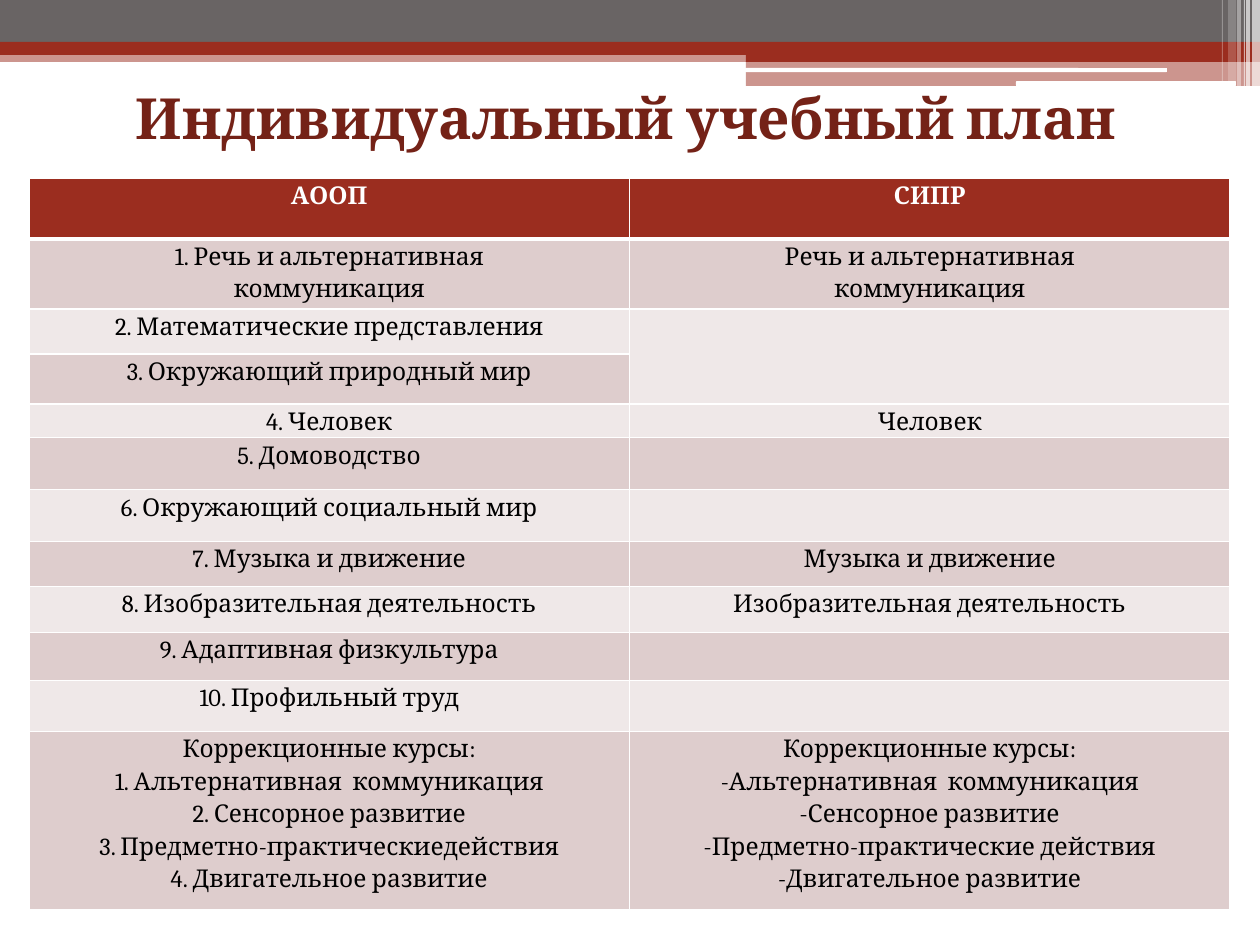
from lxml import etree
from pptx import Presentation
from pptx.dml.color import RGBColor
from pptx.enum.shapes import MSO_SHAPE
from pptx.enum.text import MSO_ANCHOR, PP_ALIGN
from pptx.oxml.ns import qn
from pptx.util import Emu, Pt

RECT = MSO_SHAPE.RECTANGLE
ROUND = MSO_SHAPE.ROUNDED_RECTANGLE
CENTER = PP_ALIGN.CENTER
BOTTOM = MSO_ANCHOR.BOTTOM
SCALE = 914400 / 126
COLORS = {"gray": "696464", "red": "9B2D1F", "wine": "742217", "white": "FFFFFF",
          "black": "000000", "dark": "DECDCD", "light": "EFE8E8"}


def px(n):
    return Emu(round(n * SCALE))


def rgb(name):
    return RGBColor.from_string(COLORS[name])


class Deck:
    face = "Cambria"

    def __init__(self, wide, high):
        self.prs = Presentation()
        self.prs.slide_width, self.prs.slide_height = px(wide), px(high)
        self.slide = self.prs.slides.add_slide(self.prs.slide_layouts[6])

    def bar(self, box, color, alpha=100, kind=RECT):
        shape = self.slide.shapes.add_shape(kind, *map(px, box))
        shape.shadow.inherit = False
        shape.line.fill.background()
        shape.fill.solid()
        shape.fill.fore_color.rgb = rgb(color)
        if alpha < 100:
            tone = shape.element.spPr.find(qn("a:solidFill"))[0]
            etree.SubElement(tone, qn("a:alpha"), val=str(alpha * 1000))
        return shape

    def label(self, par, text, size, color, bold):
        par.alignment = CENTER
        if not text:
            # Keeps the line of an empty cell small
            etree.SubElement(par._p, qn("a:endParaRPr"), sz=str(size * 100))
            return
        run = par.add_run()
        run.text = text
        style = {"name": self.face, "size": Pt(size), "bold": bold}
        for key, value in style.items():
            setattr(run.font, key, value)
        run.font.color.rgb = rgb(color)

    def title(self, box, text):
        frame = self.slide.shapes.add_textbox(*map(px, box)).text_frame
        layout = {"word_wrap": True, "vertical_anchor": BOTTOM,
                  "margin_top": 0, "margin_bottom": px(26)}
        for key, value in layout.items():
            setattr(frame, key, value)
        self.label(frame.paragraphs[0], text, 32.4, "wine", True)

    def edge(self, cell, widths):
        props = cell._tc.get_or_add_tcPr()
        for i, (side, width) in enumerate(widths.items()):
            line = etree.Element(qn("a:ln" + side), w=str(Pt(width)))
            fill = etree.SubElement(line, qn("a:solidFill"))
            etree.SubElement(fill, qn("a:srgbClr"), val=COLORS["white"])
            props.insert(i, line)

    def cell(self, cell, text, fill, color, bold, widths):
        pads = {"margin_left": px(9), "margin_right": px(9),
                "margin_top": 0, "margin_bottom": 0}
        for key, value in pads.items():
            setattr(cell, key, value)
        cell.fill.solid()
        cell.fill.fore_color.rgb = rgb(fill)
        self.edge(cell, widths)
        frame = cell.text_frame
        for i, line in enumerate(text.split("\n")):
            par = frame.add_paragraph() if i else frame.paragraphs[0]
            par.line_spacing = 1.15
            self.label(par, line, 14, color, bold)

    def table(self, box, rows, highs, spans):
        grid = self.slide.shapes.add_table(len(rows), len(rows[0]), *map(px, box)).table
        grid.horz_banding = False
        for r, (row, high) in enumerate(zip(rows, highs)):
            grid.rows[r].height = px(high)
            head = r == 0
            fill = "red" if head else ("light", "dark")[r % 2]
            widths = {"L": 1, "R": 1, "T": 3 if r == 1 else 1, "B": 3 if head else 1}
            for c, text in enumerate(row):
                self.cell(grid.cell(r, c), text, fill,
                          "white" if head else "black", head, widths)
        for first, last in spans:
            grid.cell(*first).merge(grid.cell(*last))


ROWS = [
    ("АООП", "СИПР"),
    ("1. Речь и альтернативная\nкоммуникация", "Речь и альтернативная\nкоммуникация"),
    ("2. Математические представления", ""),
    ("3. Окружающий природный мир", ""),
    ("4. Человек", "Человек"),
    ("5. Домоводство", ""),
    ("6. Окружающий социальный мир", ""),
    ("7. Музыка и движение", "Музыка и движение"),
    ("8. Изобразительная деятельность", "Изобразительная деятельность"),
    ("9. Адаптивная физкультура", ""),
    ("10. Профильный труд", ""),
    ("Коррекционные курсы:\n1. Альтернативная  коммуникация\n2. Сенсорное развитие\n"
     "3. Предметно-практическиедействия\n4. Двигательное развитие",
     "Коррекционные курсы:\n-Альтернативная  коммуникация\n-Сенсорное развитие\n"
     "-Предметно-практические действия\n-Двигательное развитие"),
]
HIGHS = [61, 70, 45, 50, 32, 52, 52, 45, 46, 48, 51, 178]


def main():
    deck = Deck(1260, 945)

    # Top bands
    deck.bar((0, 50, 1260, 12), "red", 50)
    deck.bar((0, 0, 1260, 42), "gray")
    deck.bar((0, 42, 1260, 13), "red")
    deck.bar((746, 49, 514, 13), "red")
    deck.bar((746, 61, 514, 25), "red", 50)

    # White rules
    for box in ((745, 68, 422, 4), (1016, 81, 220, 5)):
        deck.bar(box, "white", kind=ROUND).adjustments[0] = 0.17

    # Corner stripes: left, width, height, alpha
    for left, wide, high, alpha in ((1252, 8, 86, 65), (1246, 4, 86, 65), (1244, 1, 86, 60),
                                    (1237, 4, 86, 40), (1228, 8, 81, 20), (1222, 1, 81, 30)):
        deck.bar((left, 0, wide, high), "white", alpha)

    # Title and plan
    deck.title((59, 118, 1134, 59), "Индивидуальный учебный план")
    deck.table((29, 178, 1201, sum(HIGHS)), ROWS, HIGHS, [((2, 1), (3, 1))])

    deck.prs.save("out.pptx")


if __name__ == "__main__":
    main()
